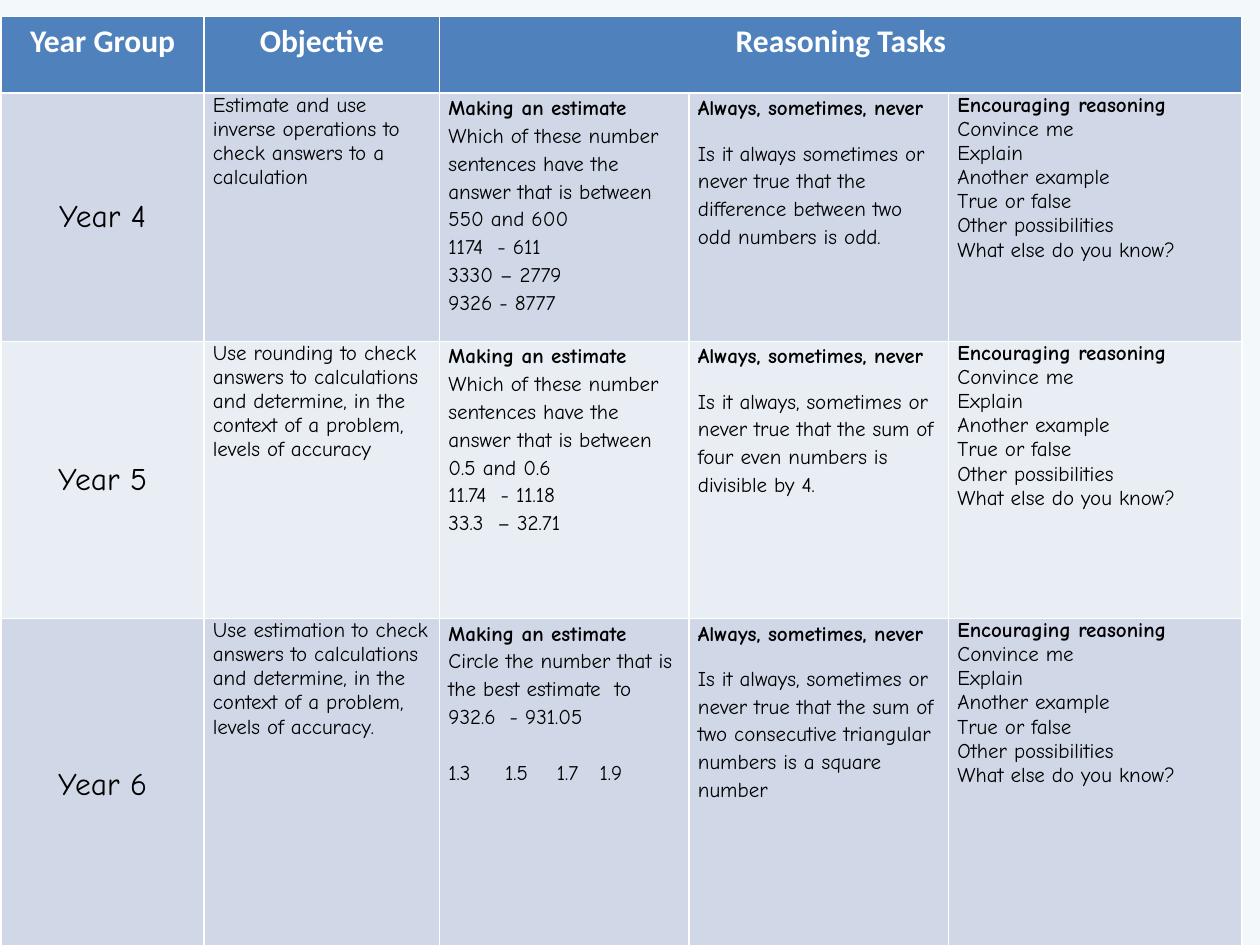
"""Build a slide with a table of estimation reasoning tasks for Years 4 to 6."""
from dataclasses import dataclass

from lxml import etree
from pptx import Presentation
from pptx.dml.color import RGBColor
from pptx.enum.text import MSO_ANCHOR, PP_ALIGN
from pptx.oxml.ns import qn
from pptx.util import Inches, Pt

CENTER, LEFT = PP_ALIGN.CENTER, PP_ALIGN.LEFT
MIDDLE = MSO_ANCHOR.MIDDLE

BACKGROUND = RGBColor(0xF3, 0xF9, 0xFB)
HEADER_BLUE = RGBColor(0x4F, 0x81, 0xBD)
BANDS = (RGBColor(0xD0, 0xD8, 0xE8), RGBColor(0xE9, 0xED, 0xF4))
WHITE = RGBColor(0xFF, 0xFF, 0xFF)
BLACK = RGBColor(0x00, 0x00, 0x00)

HEADER_FONT, BODY_FONT = "Calibri", "Comic Neue"
COLUMN_WIDTHS = (1.61, 1.87, 1.98, 2.06, 2.33)
ROW_HEIGHTS = (0.61, 1.97, 2.2, 2.65)
HEADINGS = ("Year Group", "Objective", "Reasoning Tasks")
TAB_STOPS = (0.45, 0.86, 1.2)
PROMPTS = ("Convince me", "Explain", "Another example", "True or false",
           "Other possibilities", "What else do you know?")


@dataclass(frozen=True)
class Line:
    text: str
    bold: bool = False
    size: int = 12
    align: PP_ALIGN = LEFT
    spacing: float = 1.0
    before: float = 0
    after: float = 0
    font: str = BODY_FONT
    color: RGBColor = BLACK


@dataclass(frozen=True)
class YearGroup:
    name: str
    objective: str
    estimate: tuple[Line, ...]
    statement: str


def task_lines(*texts: str) -> tuple[Line, ...]:
    """Return task lines with the wider line spacing."""
    return tuple(Line(text, spacing=1.15) for text in texts)


YEARS = (
    YearGroup(
        "Year 4",
        "Estimate and use inverse operations to check answers to a calculation",
        task_lines("Which of these number sentences have the answer that is "
                   "between 550 and 600",
                   "1174  - 611", "3330 – 2779", "9326 - 8777"),
        "Is it always sometimes or never true that the difference between "
        "two odd numbers is odd."),
    YearGroup(
        "Year 5",
        "Use rounding to check answers to calculations and determine, in the "
        "context of a problem, levels of accuracy",
        task_lines("Which of these number sentences have the answer that is "
                   "between 0.5 and 0.6",
                   "11.74  - 11.18", "33.3  – 32.71"),
        "Is it always, sometimes or never true that the sum of four even "
        "numbers is divisible by 4."),
    YearGroup(
        "Year 6",
        "Use estimation to check answers to calculations and determine, in "
        "the context of a problem, levels of accuracy.",
        task_lines("Circle the number that is the best estimate  to",
                   "932.6  - 931.05")
        + (Line("1.3\t1.5\t1.7\t1.9", spacing=1.15, before=16),),
        "Is it always, sometimes or never true that the sum of two "
        "consecutive triangular numbers is a square number"),
)


def add_tab_stops(paragraph) -> None:
    """Set the left tab stops of a paragraph."""
    stops = etree.SubElement(paragraph._p.get_or_add_pPr(), qn("a:tabLst"))
    for position in TAB_STOPS:
        etree.SubElement(stops, qn("a:tab"), pos=str(Inches(position)), algn="l")


def fill_cell(cell, lines: tuple[Line, ...], fill: RGBColor) -> None:
    """Colour a cell and write its lines."""
    cell.fill.solid()
    cell.fill.fore_color.rgb = fill
    for index, line in enumerate(lines):
        frame = cell.text_frame
        paragraph = frame.add_paragraph() if index else frame.paragraphs[0]
        paragraph.alignment = line.align
        paragraph.line_spacing = line.spacing
        paragraph.space_before = Pt(line.before)
        paragraph.space_after = Pt(line.after)
        if "\t" in line.text:
            add_tab_stops(paragraph)
        run = paragraph.add_run()
        run.text = line.text
        run.font.name = line.font
        run.font.size = Pt(line.size)
        run.font.bold = line.bold
        run.font.color.rgb = line.color


def fill_year(cells: list, year: YearGroup, fill: RGBColor) -> None:
    """Write one year group across its table row."""
    year_cell, *task_cells = cells
    year_cell.vertical_anchor = MIDDLE
    fill_cell(year_cell, (Line(year.name, size=18, align=CENTER),), fill)
    contents = (
        (Line(year.objective),),
        (Line("Making an estimate", bold=True, spacing=1.15), *year.estimate),
        (Line("Always, sometimes, never", bold=True, spacing=1.15, after=10),
         *task_lines(year.statement)),
        (Line("Encouraging reasoning", bold=True), *map(Line, PROMPTS)),
    )
    for cell, lines in zip(task_cells, contents):
        cell.margin_left = cell.margin_right = Inches(0.07)
        cell.margin_top = cell.margin_bottom = 0
        fill_cell(cell, lines, fill)


def main() -> None:
    """Create and save the presentation."""
    deck = Presentation()
    deck.slide_width, deck.slide_height = Inches(10), Inches(7.5)
    slide = deck.slides.add_slide(deck.slide_layouts[6])
    slide.background.fill.solid()
    slide.background.fill.fore_color.rgb = BACKGROUND

    tasks = slide.shapes.add_table(
        len(ROW_HEIGHTS), len(COLUMN_WIDTHS), Inches(0.01), Inches(0.13),
        Inches(sum(COLUMN_WIDTHS)), Inches(sum(ROW_HEIGHTS))).table
    for column, width in zip(tasks.columns, COLUMN_WIDTHS):
        column.width = Inches(width)
    for row, height in zip(tasks.rows, ROW_HEIGHTS):
        row.height = Inches(height)

    tasks.cell(0, 2).merge(tasks.cell(0, 4))
    for column, heading in enumerate(HEADINGS):
        line = Line(heading, bold=True, size=18, align=CENTER,
                    font=HEADER_FONT, color=WHITE)
        fill_cell(tasks.cell(0, column), (line,), HEADER_BLUE)
    for index, year in enumerate(YEARS):
        cells = list(tasks.rows[index + 1].cells)
        fill_year(cells, year, BANDS[index % len(BANDS)])

    deck.save("out.pptx")


if __name__ == "__main__":
    main()
